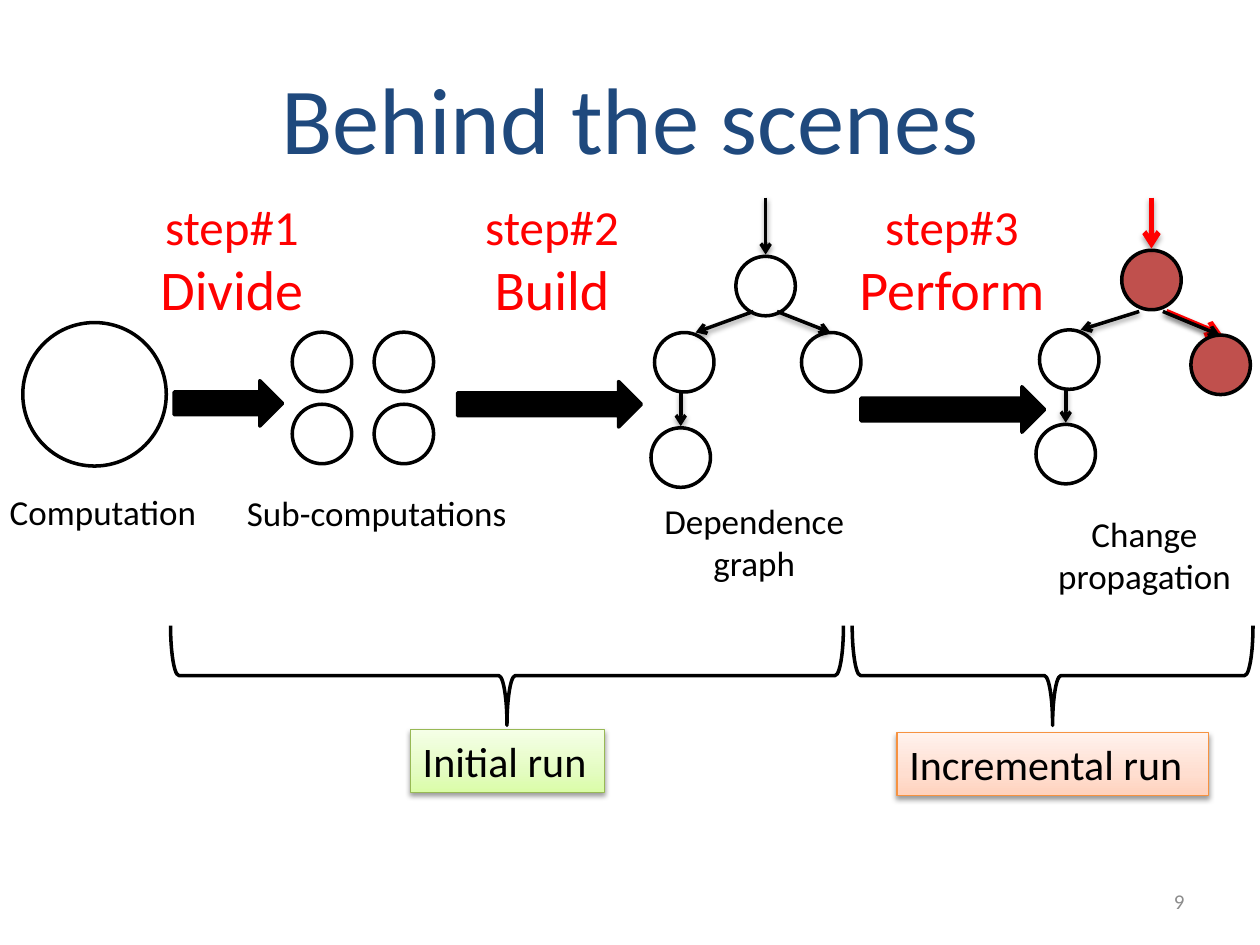
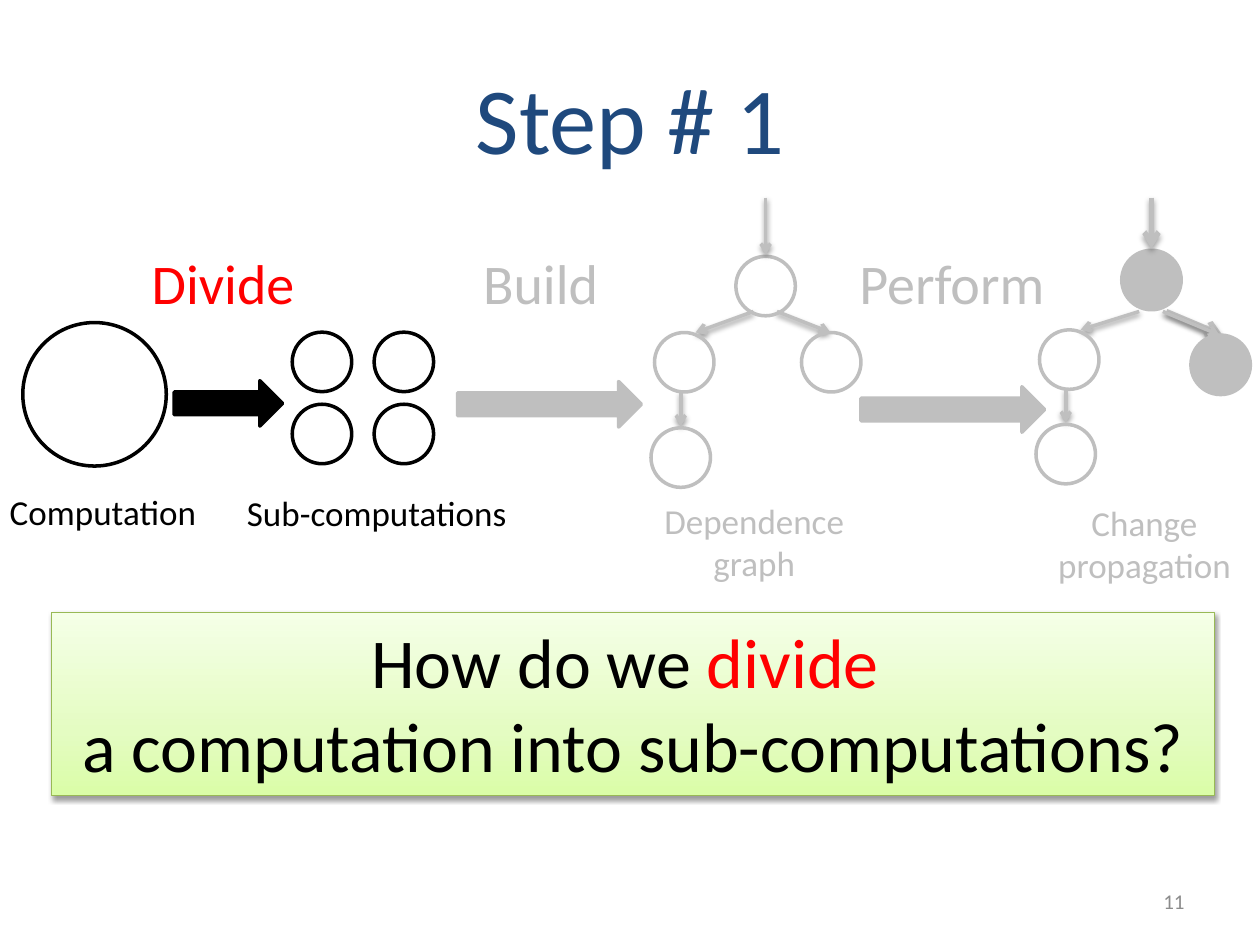
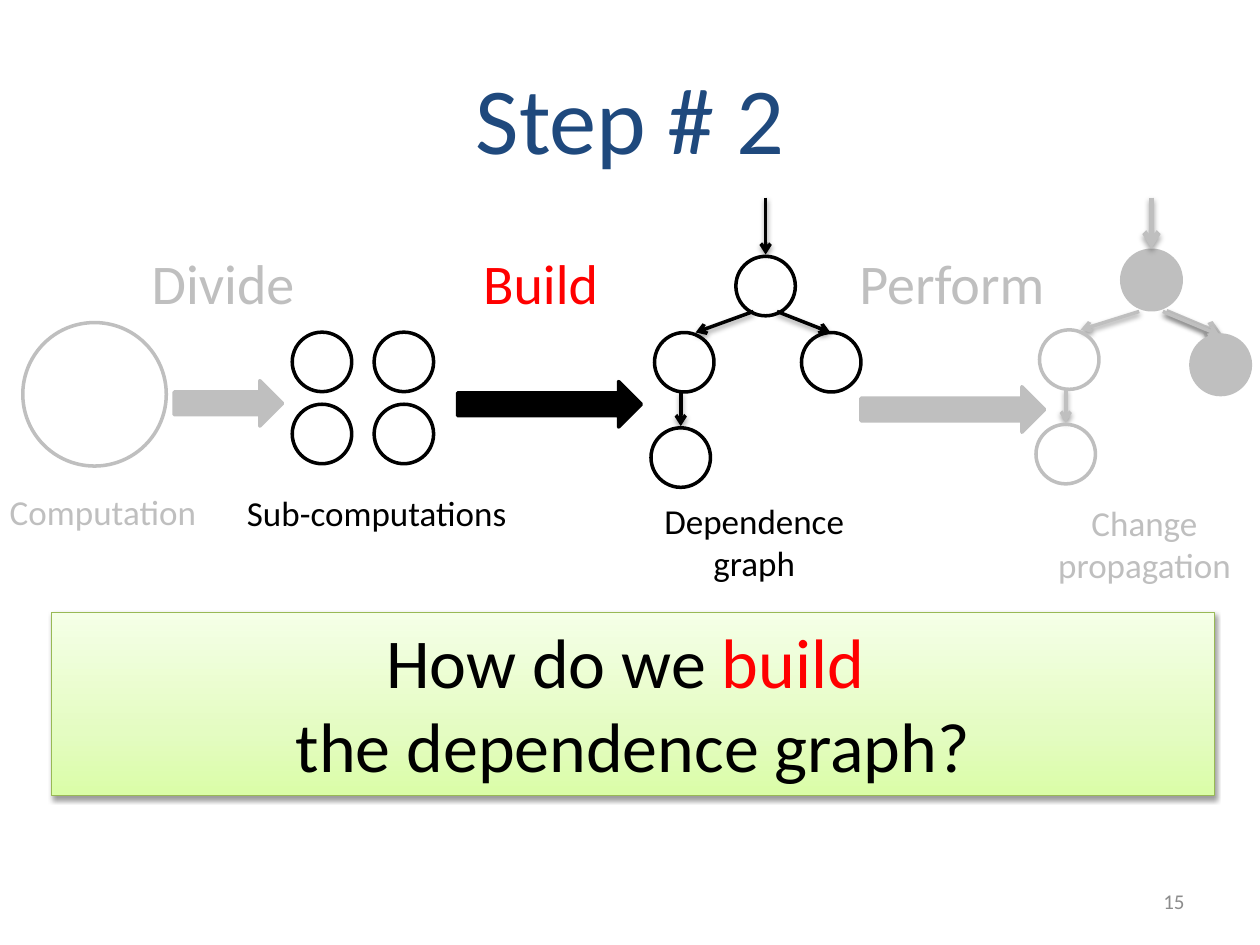
from lxml.etree import SubElement
from copy import deepcopy
from itertools import product
from pptx import Presentation
from pptx.dml.color import RGBColor
from pptx.enum.shapes import MSO_CONNECTOR, MSO_SHAPE
from pptx.enum.text import MSO_ANCHOR, MSO_AUTO_SIZE, PP_ALIGN
from pptx.oxml.ns import qn
from pptx.util import Pt

COLORS = {
    "title": "1F497D", "ink": "000000", "faded": "BFBFBF", "accent": "FF0000",
    "changed": "C0504D", "number": "8C8C8C", "paper": "FFFFFF",
    "green_line": "98B955", "orange_line": "F69240",
}
GRADIENTS = {
    "green": ("DAFDA7", "E4FCC2", "F5FFE7"),
    "orange": ("FFD2BD", "FFDED0", "FFF2ED"),
}
GRADIENT_STOPS = (0, 0.35, 1)
FONT = "Calibri"
RADIUS = 17
FORK_TOP = 65
STAGES = {"computation", "divide", "subcomputations", "build",
          "dependence", "perform", "change"}
ARROWS = {
    "divide": (99.5, 217.5, 62, 26),
    "build": (261.5, 218, 105, 26),
    "perform": (492, 221, 105, 26),
}
NUMBERED_STEPS = {
    "divide": (83, 108.5, 99, 80),
    "build": (268.5, 108.5, 94, 80),
    "perform": (480, 108.5, 128, 80),
}
PLAIN_STEPS = {
    "divide": (77.5, 138.5, 100, 46),
    "build": (267, 138.5, 84, 46),
    "perform": (480, 138.5, 128, 46),
}
DEPENDENCE_NODES = {"root": (65.5, 50.5), "left": (19, 94),
                    "right": (103, 94), "leaf": (17, 148.5)}
CHANGE_NODES = {"root": (66, 47), "left": (19, 92.5),
                "right": (105.5, 95.5), "leaf": (17, 146.5)}


def rgb(name):
    return RGBColor.from_string(COLORS[name])


def set_effects(shape, opacity=None, blur=3.1, distance=1.6):
    effects = SubElement(shape._element.spPr, qn("a:effectLst"))
    if opacity:
        shadow = SubElement(effects, qn("a:outerShdw"), blurRad=str(Pt(blur)),
                            dist=str(Pt(distance)), dir="5400000", rotWithShape="0")
        black = SubElement(shadow, qn("a:srgbClr"), val=COLORS["ink"])
        SubElement(black, qn("a:alpha"), val=str(opacity * 1000))


def add_outline(slide, kind, box, line, fill=None):
    shape = slide.shapes.add_shape(kind, *map(Pt, box))
    if fill:
        shape.fill.solid()
        shape.fill.fore_color.rgb = rgb(fill)
    else:
        shape.fill.background()
    shape.line.color.rgb = rgb(line)
    shape.line.width = Pt(2)
    set_effects(shape)
    return shape


def add_circle(slide, center, radius, line, fill=None):
    x, y = center
    add_outline(slide, MSO_SHAPE.OVAL,
                (x - radius, y - radius, 2 * radius, 2 * radius), line, fill)


def add_edge(slide, start, end, color, heavy=False):
    edge = slide.shapes.add_connector(MSO_CONNECTOR.STRAIGHT, *map(Pt, start + end))
    edge.line.color.rgb = rgb(color)
    edge.line.width = Pt(3 if heavy else 2)
    SubElement(edge._element.spPr.find(qn("a:ln")), qn("a:tailEnd"), type="arrow")
    set_effects(edge, *((35, 3.1, 1.8) if heavy else (38,)))


def write(shape, lines, color, align=PP_ALIGN.LEFT, wrap=False, anchor=MSO_ANCHOR.TOP):
    frame = shape.text_frame
    frame.word_wrap = wrap
    frame.vertical_anchor = anchor
    for index, (text, size) in enumerate(lines):
        paragraph = frame.add_paragraph() if index else frame.paragraphs[0]
        paragraph.text = text
        paragraph.alignment = align
        paragraph.font.name = FONT
        paragraph.font.size = Pt(size)
        paragraph.font.color.rgb = rgb(color)
    return frame


def add_label(slide, box, lines, color, align=PP_ALIGN.CENTER):
    label = slide.shapes.add_textbox(*map(Pt, box))
    write(label, lines, color, align).auto_size = MSO_AUTO_SIZE.SHAPE_TO_FIT_TEXT


def add_card(slide, box, theme):
    card = slide.shapes.add_shape(MSO_SHAPE.RECTANGLE, *map(Pt, box))
    card.fill.gradient()
    card.fill.gradient_angle = 90
    stop_list = card._element.spPr.find(".//" + qn("a:gsLst"))
    stop_list.insert(1, deepcopy(stop_list[0]))
    for stop, position, color in zip(card.fill.gradient_stops, GRADIENT_STOPS,
                                     GRADIENTS[theme]):
        stop.position = position
        stop.color.rgb = RGBColor.from_string(color)
    card.line.color.rgb = rgb(theme + "_line")
    card.line.width = Pt(0.75)
    set_effects(card, 38)
    return card


def add_frame(slide, title, number):
    heading = slide.shapes.add_textbox(Pt(36), Pt(21.6), Pt(648), Pt(90))
    write(heading, [(title, 54)], "title", PP_ALIGN.CENTER, True, MSO_ANCHOR.MIDDLE)
    footer = slide.shapes.add_textbox(Pt(516), Pt(500.5), Pt(168), Pt(28.8))
    write(footer, [(number, 12)], "number", PP_ALIGN.RIGHT, True, MSO_ANCHOR.MIDDLE)


def add_computation(slide, left, top, color):
    add_circle(slide, (left + 55.5, top + 41), 41, color)
    add_label(slide, (left, top + 92.5, 127, 32), [("Computation", 20)],
              color, PP_ALIGN.LEFT)


def add_subcomputations(slide, left, top, color):
    for row, column in product(range(2), repeat=2):
        add_circle(slide, (left + 50 + 46.8 * column, top + 17 + 41.2 * row),
                   RADIUS, color)
    add_label(slide, (left, top + 87.5, 171, 32), [("Sub-computations", 20)],
              color, PP_ALIGN.LEFT)


def add_graph(slide, left, top, nodes, color, changed_edge=None, changed_node=None):
    centers = {name: (left + x, top + y) for name, (x, y) in nodes.items()}
    root_x, root_y = centers["root"]
    right_x, right_y = centers["right"]
    left_x, left_y = centers["left"]
    leaf_x, leaf_y = centers["leaf"]
    fork = top + FORK_TOP
    if changed_edge:
        add_edge(slide, (root_x + 8.5, fork), (right_x + 1, right_y - RADIUS),
                 changed_edge, True)
    add_edge(slide, (root_x + 6.5, fork), (right_x - 0.5, right_y - RADIUS), color)
    add_edge(slide, (root_x - 7, fork), (left_x + 6.5, left_y - RADIUS), color)
    add_edge(slide, (leaf_x, left_y + RADIUS), (leaf_x, leaf_y - RADIUS - 1), color)
    for name, center in centers.items():
        fill = changed_node if name in ("root", "right") else None
        add_circle(slide, center, RADIUS, color, fill)
    add_edge(slide, (root_x, top), (root_x, root_y - RADIUS - 1),
             changed_edge or color, bool(changed_edge))


def add_pipeline(slide, active, steps, change_label_top, numbered=False):
    def shade(stage, color="ink"):
        return color if stage in active else "faded"

    add_computation(slide, -1.5, 184.3, shade("computation"))
    add_subcomputations(slide, 134, 189.8, shade("subcomputations"))
    add_graph(slide, 372, 113, DEPENDENCE_NODES, shade("dependence"))
    add_graph(slide, 592, 113, CHANGE_NODES, shade("change"),
              shade("change", "accent"), shade("change", "changed"))
    for number, (step, box) in enumerate(steps.items(), 1):
        add_outline(slide, MSO_SHAPE.RIGHT_ARROW, ARROWS[step], shade(step), shade(step))
        lines = [(f"step#{number}", 28)] if numbered else []
        add_label(slide, box, lines + [(step.capitalize(), 32)], shade(step, "accent"))
    add_label(slide, (369.5, 282, 123, 55.5), [("Dependence", 20), ("graph", 20)],
              shade("dependence"))
    add_label(slide, (594, change_label_top, 120, 55.5),
              [("Change", 20), ("propagation", 20)], shade("change"))


def add_run(slide, left, top, width, name, card_box, theme):
    depth = 57
    brace_left = left + (width - depth) / 2
    brace_top = top - (width - depth) / 2
    brace = add_outline(slide, MSO_SHAPE.LEFT_BRACE,
                        (brace_left, brace_top, depth, width), "ink", "paper")
    brace.rotation = 270
    x, y, card_width, card_height = card_box
    card = add_card(slide, (left + x, top + y, card_width, card_height), theme)
    write(card, [(name, 24)], "ink")


def add_question(slide, box, verb, rest):
    card = add_card(slide, box, "green")
    frame = write(card, [("How do we ", 40), (rest, 40)], "ink", PP_ALIGN.CENTER, True)
    keyword = frame.paragraphs[0].add_run()
    keyword.text = verb + " "
    keyword.font.color.rgb = rgb("accent")


def build_overview(slide):
    add_frame(slide, "Behind the scenes", "9")
    add_pipeline(slide, STAGES, NUMBERED_STEPS, 289.5, True)
    add_run(slide, 97.5, 357.5, 384.5, "Initial run", (137, 59.5, 111, 36), "green")
    add_run(slide, 487, 357.5, 229, "Incremental run", (25.5, 61, 178, 36), "orange")


def build_step(slide, title, number, active, verb, rest):
    add_frame(slide, title, number)
    add_pipeline(slide, active, PLAIN_STEPS, 283)
    add_question(slide, (29.5, 350, 664.5, 104.5), verb, rest)


def main():
    deck = Presentation()
    deck.slide_width, deck.slide_height = Pt(720), Pt(540)
    overview, divide, build = (deck.slides.add_slide(deck.slide_layouts[6])
                               for _ in range(3))
    build_overview(overview)
    build_step(divide, "Step # 1", "11", {"computation", "divide", "subcomputations"},
               "divide", "a computation into sub-computations?")
    build_step(build, "Step # 2", "15", {"subcomputations", "build", "dependence"},
               "build", "the dependence graph?")
    deck.save("out.pptx")


if __name__ == "__main__":
    main()
